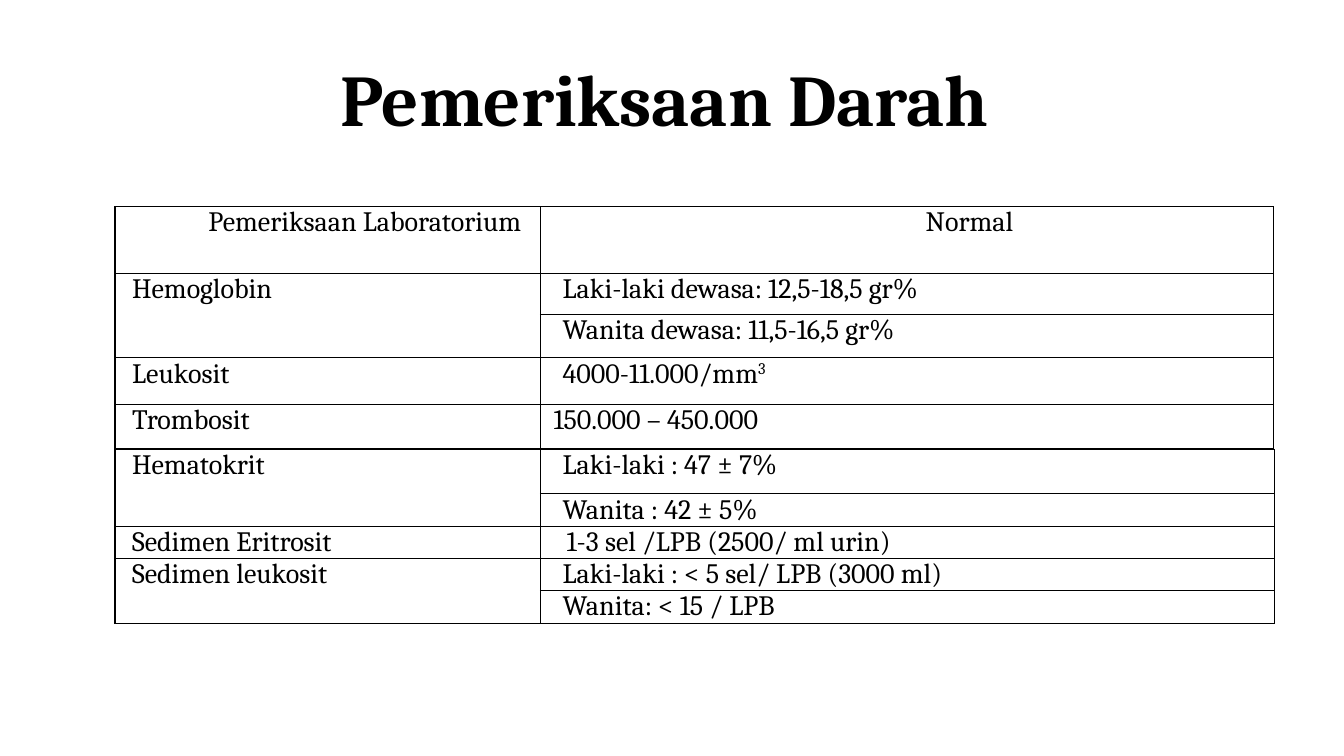
from dataclasses import dataclass

from lxml import etree
from pptx import Presentation
from pptx import util as u
from pptx.dml.color import RGBColor
from pptx.enum import text
from pptx.oxml import ns

FONT = "Cambria"
INK = "000000"


@dataclass
class Entry:
    wording: str
    indent: float
    before: float
    superscript: str = ""
    centred: bool = False


@dataclass
class Row:
    height: float
    normal: Entry
    test: Entry | None = None


@dataclass
class LabTable:
    top: float
    widths: tuple[float, float]
    rows: list[Row]


def colour(value: str) -> RGBColor:
    return RGBColor.from_string(value)


def style_font(paragraph, size: float, bold: bool = False) -> None:
    font = paragraph.font
    font.name, font.size, font.bold = FONT, u.Pt(size), bold
    font.color.rgb = colour(INK)


def draw_borders(cell) -> None:
    properties = cell._tc.get_or_add_tcPr()
    for side in ("lnL", "lnR", "lnT", "lnB"):
        line = etree.SubElement(properties, ns.qn(f"a:{side}"), w=str(u.Pt(1)))
        fill = etree.SubElement(line, ns.qn("a:solidFill"))
        etree.SubElement(fill, ns.qn("a:srgbClr"), val=INK)


def write_entry(cell, entry: Entry) -> None:
    paragraph = cell.text_frame.paragraphs[0]
    paragraph.add_run().text = entry.wording
    if entry.superscript:
        raised = paragraph.add_run()
        raised.text = entry.superscript
        raised._r.get_or_add_rPr().set("baseline", "30000")
    style_font(paragraph, 20)
    paragraph.space_before = u.Pt(entry.before)
    paragraph.alignment = text.PP_ALIGN.CENTER if entry.centred else text.PP_ALIGN.LEFT
    properties = paragraph._p.get_or_add_pPr()
    properties.set("marL", str(u.Inches(entry.indent)))
    properties.set("indent", "0")


def draw_table(slide, lab: LabTable) -> None:
    height = sum(row.height for row in lab.rows)
    table = slide.shapes.add_table(
        len(lab.rows), 2, u.Inches(1.14), u.Inches(lab.top),
        u.Inches(sum(lab.widths)), u.Inches(height)).table
    table.first_row = table.horz_banding = False
    for column, width in zip(table.columns, lab.widths):
        column.width = u.Inches(width)
    for index, row in enumerate(lab.rows):
        table.rows[index].height = u.Inches(row.height)
        for cell, entry in zip(table.rows[index].cells, (row.test, row.normal)):
            cell.margin_left = cell.margin_right = 0
            cell.margin_top = cell.margin_bottom = 0
            draw_borders(cell)
            cell.fill.background()
            if entry:
                write_entry(cell, entry)
        if row.test is None:
            table.cell(index - 1, 0).merge(table.cell(index, 0))


LAB_TABLES = [
    LabTable(2.05, (4.22, 7.27), [
        Row(0.66, Entry("Normal", 1.24, 3.7, centred=True),
            Entry("Pemeriksaan Laboratorium ", 0.8, 3.7, centred=True)),
        Row(0.41, Entry("Laki-laki dewasa: 12,5-18,5 gr%", 0.22, 2.2),
            Entry("Hemoglobin", 0.17, 2.2)),
        Row(0.43, Entry("Wanita dewasa: 11,5-16,5 gr%", 0.22, 5.6)),
        Row(0.46, Entry("4000-11.000/mm", 0.22, 2.7, superscript="3"),
            Entry("Leukosit", 0.17, 0.7)),
        Row(0.44, Entry("150.000 – 450.000", 0.13, 2.7),
            Entry("Trombosit", 0.17, 2.7)),
    ]),
    LabTable(4.46, (4.22, 7.28), [
        Row(0.44, Entry("Laki-laki : 47 ± 7%", 0.22, 2.7),
            Entry("Hematokrit", 0.17, 1.8)),
        Row(0.29, Entry("Wanita : 42 ± 5%", 0.22, 2.8)),
        Row(0.29, Entry("1-3 sel /LPB (2500/ ml urin)", 0.26, 2.7),
            Entry("Sedimen Eritrosit", 0.17, 1.6)),
        Row(0.29, Entry("Laki-laki : < 5 sel/ LPB (3000 ml)", 0.22, 2.7),
            Entry("Sedimen leukosit", 0.17, 1.6)),
        Row(0.29, Entry("Wanita: < 15 / LPB", 0.22, 2.9)),
    ]),
]


def draw_title(slide) -> None:
    title = slide.shapes.title
    title.left, title.top = u.Inches(0.92), u.Inches(0.2)
    title.width, title.height = u.Inches(11.5), u.Inches(1.65)
    title.text_frame.text = "Pemeriksaan Darah "
    title.text_frame.vertical_anchor = text.MSO_ANCHOR.MIDDLE
    heading = title.text_frame.paragraphs[0]
    heading.alignment = text.PP_ALIGN.CENTER
    heading.line_spacing = 0.9
    style_font(heading, 52, bold=True)


def main() -> None:
    deck = Presentation()
    deck.slide_width, deck.slide_height = u.Inches(13.33), u.Inches(7.5)
    slide = deck.slides.add_slide(deck.slide_layouts[5])
    draw_title(slide)
    for lab in LAB_TABLES:
        draw_table(slide, lab)
    deck.save("out.pptx")


if __name__ == "__main__":
    main()
